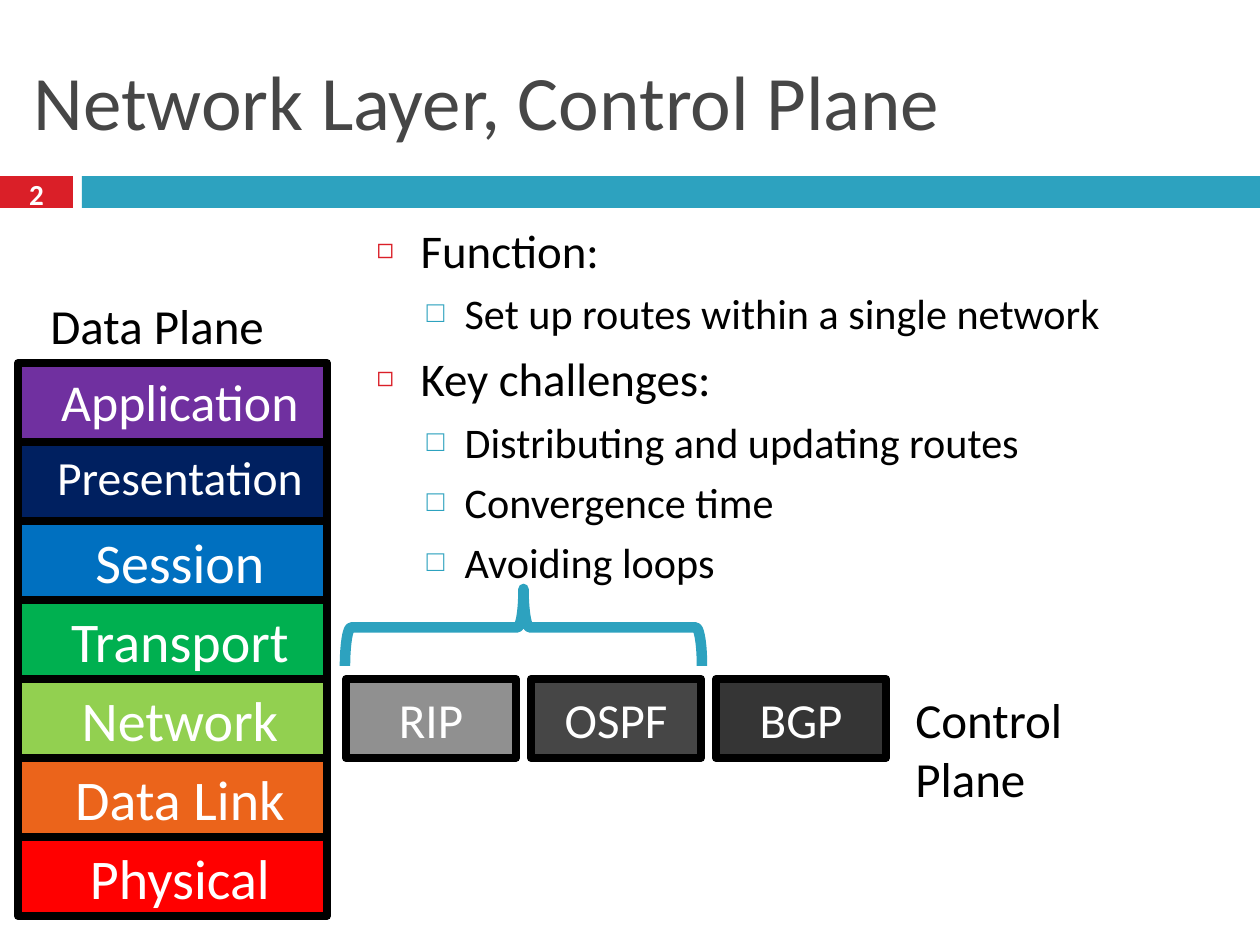
from typing import NamedTuple

from lxml import etree
from pptx import Presentation
from pptx import util as u
from pptx.dml.color import RGBColor
from pptx.enum import shapes, text
from pptx.oxml.ns import qn

PX_PER_INCH = 126
FONT = "Calibri"
COLOURS = {
    "red": "DA1F28", "teal": "2DA2BF", "heading": "464646",
    "black": "000000", "white": "FFFFFF",
    "purple": "7030A0", "navy": "002060", "blue": "0070C0", "green": "00B050",
    "lime": "92D050", "orange": "EB641B", "bright red": "FF0000",
    "light grey": "909090", "mid grey": "464646", "dark grey": "353535",
}


class Area(NamedTuple):
    left: int
    top: int
    width: int
    height: int


class Block(NamedTuple):
    label: str
    fill: str
    size: float


class Level(NamedTuple):
    size: float
    before: float
    margin: int
    hanging: int
    mark: str
    mark_colour: str
    mark_percent: int


LAYERS = [
    Block("Application", "purple", 29.6),
    Block("Presentation", "navy", 27.2),
    Block("Session", "blue", 32),
    Block("Transport", "green", 32),
    Block("Network", "lime", 32),
    Block("Data Link", "orange", 32),
    Block("Physical", "bright red", 32),
]
PROTOCOLS = [
    Block("RIP", "light grey", 28),
    Block("OSPF", "mid grey", 28),
    Block("BGP", "dark grey", 28),
]
LEVELS = [
    Level(26.8, 7, 44, 44, "◻", "red", 60),
    Level(24.1, 5.5, 88, 38, "□", "teal", 70),
]
POINTS = [
    (0, "Function:"),
    (1, "Set up routes within a single network"),
    (0, "Key challenges:"),
    (1, "Distributing and updating routes"),
    (1, "Convergence time"),
    (1, "Avoiding loops"),
]
STACK_TOP, ROW = 363, 79
PROTOCOL_LEFT, PROTOCOL_STEP = 346, 185


def px(length: int) -> u.Emu:
    return u.Emu(round(length * u.Inches(1) / PX_PER_INCH))


def rgb(name: str) -> RGBColor:
    return RGBColor.from_string(COLOURS[name])


def place(area: Area) -> list:
    return [px(length) for length in area]


def move(box, area: Area) -> None:
    box.left, box.top, box.width, box.height = place(area)


def add_span(para, words: str, size: float, colour: str, bold: bool = False) -> None:
    span = para.add_run()
    span.text = words
    span.font.name = FONT
    span.font.size = u.Pt(size)
    span.font.bold = bold
    span.font.color.rgb = rgb(colour)


def add_bar(page, area: Area, fill: str):
    bar = page.shapes.add_shape(shapes.MSO_SHAPE.RECTANGLE, *place(area))
    bar.shadow.inherit = False
    bar.fill.solid()
    bar.fill.fore_color.rgb = rgb(fill)
    bar.line.fill.background()
    return bar


def add_block(page, area: Area, block: Block, anchor):
    """Draw a filled, black-edged rectangle with a centred label."""
    box = add_bar(page, area, block.fill)
    box.line.color.rgb = rgb("black")
    box.line.width = u.Pt(4.5)
    box.text_frame.vertical_anchor = anchor
    para = box.text_frame.paragraphs[0]
    para.alignment = text.PP_ALIGN.CENTER
    add_span(para, block.label, block.size, "white")
    return para


def add_label(page, area: Area, words: str, size: float, colour: str, bold: bool = False):
    box = page.shapes.add_textbox(*place(area))
    box.text_frame.word_wrap = True
    add_span(box.text_frame.paragraphs[0], words, size, colour, bold)
    return box.text_frame


def set_bullet(para, level: Level) -> None:
    props = para._p.get_or_add_pPr()
    props.set("marL", str(px(level.margin)))
    props.set("indent", str(-px(level.hanging)))
    colour = etree.SubElement(props, qn("a:buClr"))
    etree.SubElement(colour, qn("a:srgbClr"), val=COLOURS[level.mark_colour])
    etree.SubElement(props, qn("a:buSzPct"), val=str(level.mark_percent * 1000))
    etree.SubElement(props, qn("a:buChar"), char=level.mark)


def fill_title(page) -> None:
    title = page.shapes.title
    move(title, Area(21, 32, 1218, 136))
    frame = title.text_frame
    frame.auto_size = text.MSO_AUTO_SIZE.NONE
    frame.vertical_anchor = text.MSO_ANCHOR.MIDDLE
    frame.paragraphs[0].alignment = text.PP_ALIGN.LEFT
    add_span(frame.paragraphs[0], "Network Layer, Control Plane", 44, "heading")


def fill_body(page) -> None:
    body = page.placeholders[1]
    move(body, Area(364, 215, 876, 373))
    frame = body.text_frame
    frame.auto_size = text.MSO_AUTO_SIZE.NONE
    for index, (depth, words) in enumerate(POINTS):
        para = frame.add_paragraph() if index else frame.paragraphs[0]
        level = LEVELS[depth]
        para.level = depth
        para.space_before = u.Pt(level.before)
        set_bullet(para, level)
        add_span(para, words, level.size, "black")


def add_brace(page, area: Area) -> None:
    brace = page.shapes.add_shape(shapes.MSO_SHAPE.LEFT_BRACE, *place(area))
    brace.rotation = 90
    brace.adjustments[0] = 0.08
    brace.adjustments[1] = 0.5
    brace.shadow.inherit = False
    brace.fill.background()
    brace.line.color.rgb = rgb("teal")
    brace.line.width = u.Pt(6)


def main() -> None:
    deck = Presentation()
    deck.slide_width, deck.slide_height = u.Inches(10), u.Inches(7.5)
    page = deck.slides.add_slide(deck.slide_layouts[1])

    add_bar(page, Area(0, 176, 73, 32), "red")
    add_bar(page, Area(82, 176, 1178, 32), "teal")
    fill_title(page)
    number = add_label(page, Area(0, 173, 73, 42), "2", 16.6, "white", bold=True)
    number.vertical_anchor = text.MSO_ANCHOR.MIDDLE
    number.paragraphs[0].alignment = text.PP_ALIGN.CENTER
    fill_body(page)

    for row, layer in enumerate(LAYERS):
        area = Area(18, STACK_TOP + row * ROW, 309, ROW)
        para = add_block(page, area, layer, text.MSO_ANCHOR.TOP)
        para.space_before = u.Pt(6)
        para._p.get_or_add_pPr().set("marL", str(px(15)))

    add_brace(page, Area(485, 449, 77, 357))
    network_top = STACK_TOP + 4 * ROW
    for column, protocol in enumerate(PROTOCOLS):
        area = Area(PROTOCOL_LEFT + column * PROTOCOL_STEP, network_top, 170, ROW)
        add_block(page, area, protocol, text.MSO_ANCHOR.MIDDLE)

    add_label(page, Area(903, 683, 280, 72), "Control Plane", 28, "black")
    add_label(page, Area(38, 289, 271, 72), "Data Plane", 28, "black")
    deck.save("out.pptx")


if __name__ == "__main__":
    main()
